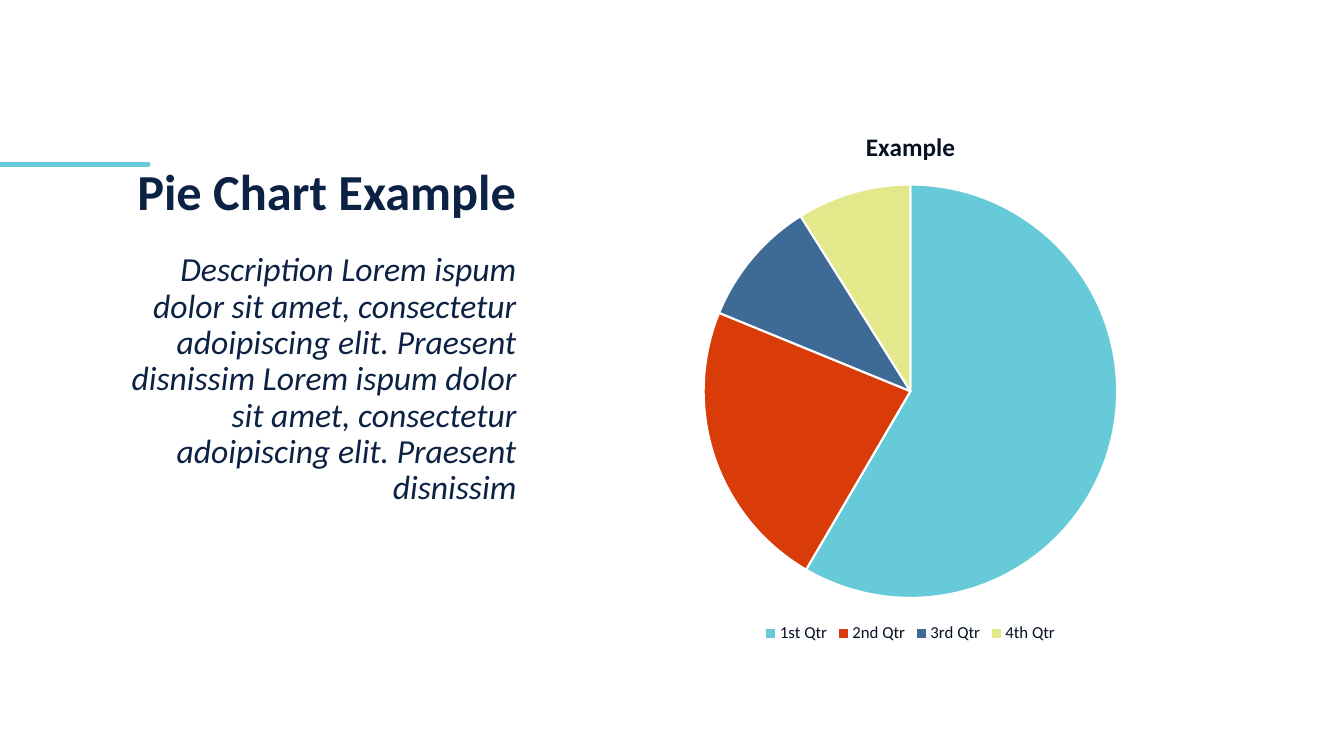
"""Build a slide with a right-aligned description beside a pie chart."""
from lxml.etree import SubElement
from pptx import Presentation
from pptx.chart.data import CategoryChartData
from pptx.dml.color import RGBColor
from pptx.enum.chart import XL_CHART_TYPE, XL_LEGEND_POSITION
from pptx.enum.shapes import MSO_CONNECTOR
from pptx.enum.text import MSO_ANCHOR, PP_ALIGN
from pptx.oxml.ns import qn
from pptx.util import Inches, Pt

FONT = "Calibri"
NAVY = RGBColor(0x0C, 0x22, 0x44)
INK = RGBColor(0x06, 0x11, 0x22)
WHITE = RGBColor(0xFF, 0xFF, 0xFF)
AQUA = RGBColor(0x66, 0xCA, 0xD8)
RED = RGBColor(0xD9, 0x3C, 0x08)
BLUE = RGBColor(0x3E, 0x6B, 0x96)
LIME = RGBColor(0xE3, 0xE9, 0x8A)

TEXT_LEFT, TEXT_WIDTH = Inches(0.92), Inches(4.3)
DESCRIPTION = (
    "Description Lorem ispum dolor sit amet, consectetur adoipiscing elit. "
    "Praesent disnissim Lorem ispum dolor sit amet, consectetur adoipiscing elit. "
    "Praesent disnissim"
)
QUARTERS = [("1st Qtr", 59, AQUA), ("2nd Qtr", 23, RED), ("3rd Qtr", 10, BLUE), ("4th Qtr", 9, LIME)]


def style_font(font, size, color, bold=False, italic=False):
    font.name = FONT
    font.size = Pt(size)
    font.color.rgb = color
    font.bold = bold
    font.italic = italic


presentation = Presentation()
presentation.slide_width = Inches(13.33)
presentation.slide_height = Inches(7.5)
slide = presentation.slides.add_slide(presentation.slide_layouts[6])

accent = slide.shapes.add_connector(
    MSO_CONNECTOR.STRAIGHT, 0, Inches(1.63), Inches(1.47), Inches(1.63)
)
accent.line.color.rgb = AQUA
accent.line.width = Pt(3.25)
accent.line._get_or_add_ln().set("cap", "rnd")
SubElement(accent._element.spPr, qn("a:effectLst"))

chart_data = CategoryChartData()
chart_data.categories = [quarter for quarter, value, color in QUARTERS]
chart_data.add_series("Series 1", [value for quarter, value, color in QUARTERS])
chart = slide.shapes.add_chart(
    XL_CHART_TYPE.PIE, Inches(5.65), Inches(1.08), Inches(6.76), Inches(5.34), chart_data
).chart
style_font(chart.font, 10, INK)
chart.has_title = True
title_run = chart.chart_title.text_frame.paragraphs[0].add_run()
title_run.text = "Example"
style_font(title_run.font, 18, INK, bold=True)
chart.chart_title.include_in_layout = False
chart.has_legend = True
chart.legend.position = XL_LEGEND_POSITION.BOTTOM
chart.legend.include_in_layout = False
style_font(chart.legend.font, 12, INK)

pie = chart.plots[0]
pie.vary_by_categories = True
for index, (quarter, value, color) in enumerate(QUARTERS):
    slice_format = pie.series[0].points[index].format
    slice_format.fill.solid()
    slice_format.fill.fore_color.rgb = color
    slice_format.line.color.rgb = WHITE
    slice_format.line.width = Pt(1.5)

for text, top, height, anchor, size, bold in [
    (DESCRIPTION, 2.46, 3.96, MSO_ANCHOR.TOP, 24, False),
    ("Pie Chart Example", 0.5, 1.75, MSO_ANCHOR.BOTTOM, 36, True),
]:
    text_frame = slide.shapes.add_textbox(
        TEXT_LEFT, Inches(top), TEXT_WIDTH, Inches(height)
    ).text_frame
    text_frame.word_wrap = True
    text_frame.vertical_anchor = anchor
    paragraph = text_frame.paragraphs[0]
    paragraph.alignment = PP_ALIGN.RIGHT
    paragraph.line_spacing = 0.9
    run = paragraph.add_run()
    run.text = text
    style_font(run.font, size, NAVY, bold=bold, italic=not bold)

presentation.save("out.pptx")
